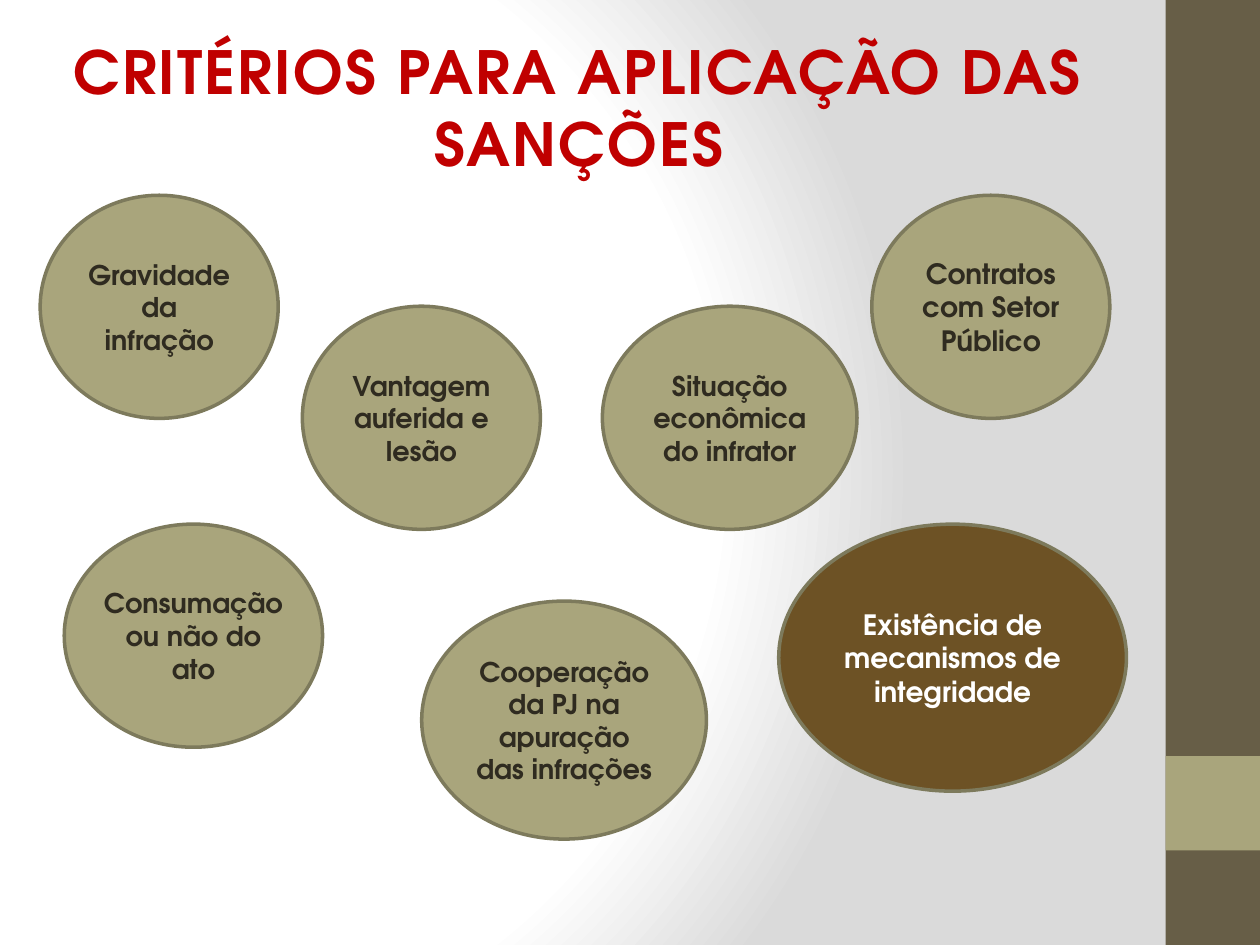
"""Build the slide on the criteria for applying sanctions."""
from lxml import etree
from pptx import Presentation
from pptx.dml.color import RGBColor
from pptx.enum.shapes import MSO_SHAPE as Shape
from pptx.enum.text import MSO_ANCHOR as Anchor, PP_ALIGN as Align
from pptx.oxml.ns import qn
from pptx.util import Pt

OLIVE = RGBColor(0x67, 0x5E, 0x47)
SAGE = RGBColor(0xA9, 0xA5, 0x7C)
OUTLINE = RGBColor(0x7D, 0x7A, 0x5C)
BROWN = RGBColor(0x6D, 0x52, 0x25)
DARK = RGBColor(0x2F, 0x2B, 0x20)
WHITE = RGBColor(0xFF, 0xFF, 0xFF)
RED = RGBColor(0xC0, 0x00, 0x00)
GREY = RGBColor(0xDA, 0xDA, 0xDA)

FONT = "TeX Gyre Adventor"
WIDTH, HEIGHT = 720, 540
BAND = 54
INSET = 7.2
TOP_ROW, MIDDLE_ROW, LOWER_ROW = 111.6, 175, 299.5
SMALL_W, SMALL_H = 136, 127.5

TITLE = "CRITÉRIOS PARA APLICAÇÃO DAS SANÇÕES"
TITLE_BOX = (28.8, 16.6, 604, 90)
CRITERIA = [
    ("Gravidade da infração", (23, TOP_ROW, SMALL_W, SMALL_H), 15.5, SAGE, DARK, INSET),
    ("Vantagem auferida e lesão", (172.8, MIDDLE_ROW, SMALL_W, SMALL_H), 15.5, SAGE, DARK, INSET),
    ("Situação econômica do infrator", (344.2, MIDDLE_ROW, 145.5, SMALL_H), 15.5, SAGE, DARK, INSET),
    ("Cooperação da PJ na apuração das infrações", (241, 343.5, 162.7, 136), 15.5, SAGE, DARK, INSET),
    ("Existência de mecanismos de integridade", (445, LOWER_ROW, 198.7, 152.6), 16, BROWN, WHITE, INSET),
    ("Contratos com Setor Público", (498.2, TOP_ROW, SMALL_W, SMALL_H), 16, SAGE, DARK, INSET),
    ("Consumação ou não do ato", (36.7, LOWER_ROW, 147.6, SMALL_H), 15.5, SAGE, DARK, 0),
]
BACKDROP = [(0, WHITE), (75, WHITE), (100, GREY)]
FOCUS = {"l": 20, "t": 50, "r": 100, "b": 50}


def paint_backdrop(slide):
    slide.background.fill.solid()
    properties = slide.element.find(".//" + qn("p:bgPr"))
    properties.remove(properties[0])
    gradient = etree.Element(qn("a:gradFill"), rotWithShape="1")
    stops = etree.SubElement(gradient, qn("a:gsLst"))
    for position, color in BACKDROP:
        stop = etree.SubElement(stops, qn("a:gs"), pos=str(position * 1000))
        etree.SubElement(stop, qn("a:srgbClr"), val=str(color))
    radial = etree.SubElement(gradient, qn("a:path"), path="circle")
    edges = {side: str(share * 1000) for side, share in FOCUS.items()}
    etree.SubElement(radial, qn("a:fillToRect"), **edges)
    properties.insert(0, gradient)


def add_figure(slide, kind, box, fill):
    figure = slide.shapes.add_shape(kind, *map(Pt, box))
    figure.shadow.inherit = False
    figure.fill.solid()
    figure.fill.fore_color.rgb = fill
    figure.line.fill.background()
    return figure


def write(frame, text, size, color, anchor):
    frame.word_wrap = True
    frame.vertical_anchor = anchor
    paragraph = frame.paragraphs[0]
    paragraph.alignment = Align.CENTER
    run = paragraph.add_run()
    run.text = text
    run.font.name = FONT
    run.font.size = Pt(size)
    run.font.bold = True
    run.font.color.rgb = color
    return run


def add_title(slide):
    title = slide.shapes.title
    title.left, title.top, title.width, title.height = map(Pt, TITLE_BOX)
    run = write(title.text_frame, TITLE, 34, RED, Anchor.TOP)
    run.font._element.set("spc", "130")


def add_criterion(slide, text, box, size, fill, color, inset):
    bubble = add_figure(slide, Shape.OVAL, box, fill)
    bubble.line.color.rgb = OUTLINE
    bubble.line.width = Pt(2)
    frame = bubble.text_frame
    frame.margin_left = frame.margin_right = Pt(inset)
    write(frame, text, size, color, Anchor.MIDDLE)


def main():
    deck = Presentation()
    deck.slide_width, deck.slide_height = Pt(WIDTH), Pt(HEIGHT)
    slide = deck.slides.add_slide(deck.slide_layouts.get_by_name("Title Only"))
    paint_backdrop(slide)
    band_left = WIDTH - BAND
    add_figure(slide, Shape.RECTANGLE, (band_left, 0, BAND, HEIGHT), OLIVE)
    add_figure(slide, Shape.RECTANGLE, (band_left, HEIGHT - 2 * BAND, BAND, BAND), SAGE)
    add_title(slide)
    for criterion in CRITERIA:
        add_criterion(slide, *criterion)
    deck.save("out.pptx")


if __name__ == "__main__":
    main()
